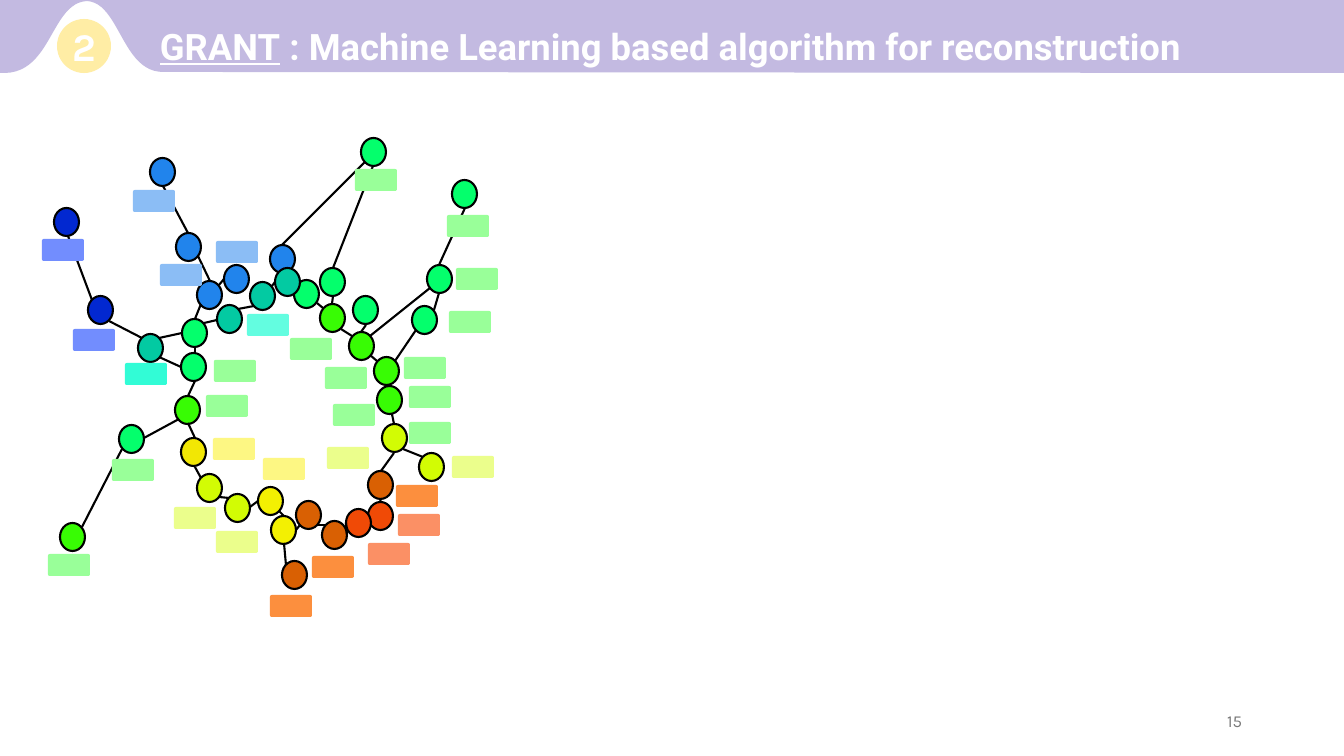
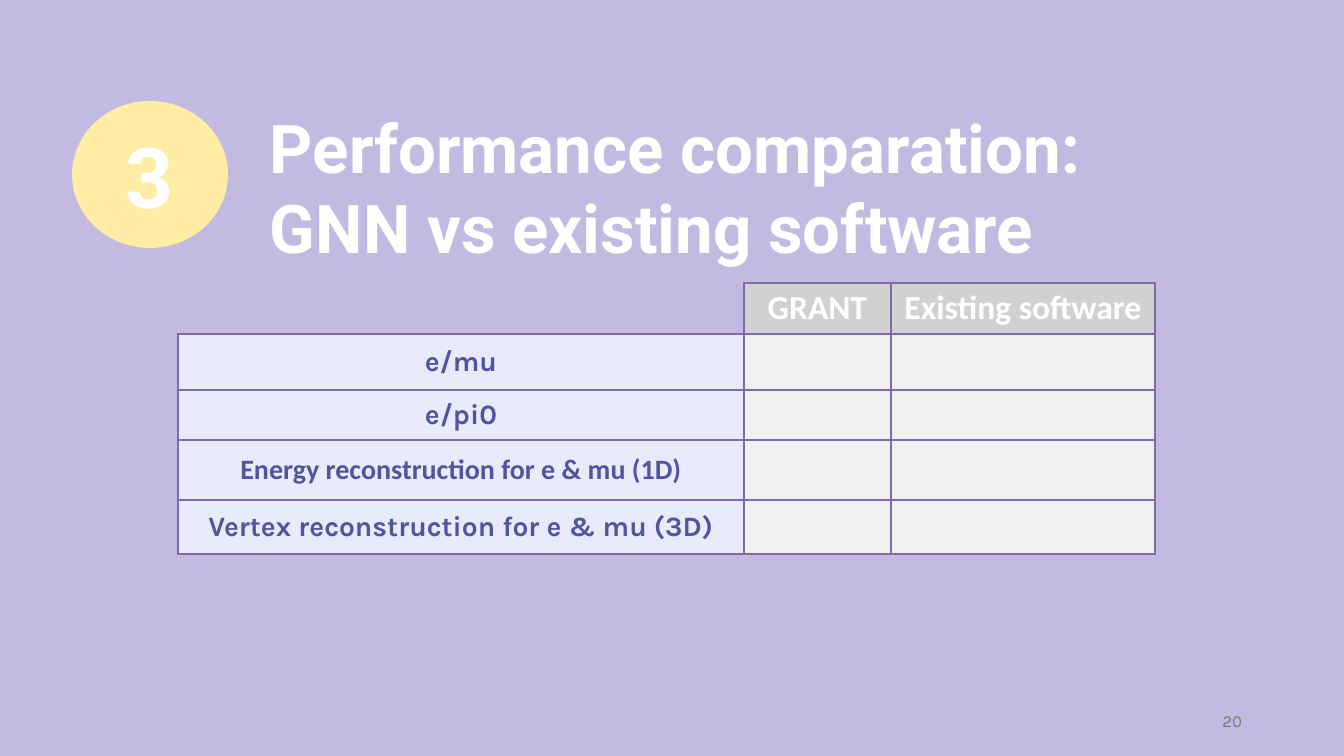
from lxml import etree
from pptx import Presentation
from pptx.dml.color import RGBColor
from pptx.enum.shapes import MSO_CONNECTOR, MSO_SHAPE
from pptx.enum.text import MSO_ANCHOR, PP_ALIGN
from pptx.oxml.ns import qn
from pptx.util import Pt

W, H = 1344, 756
PX = 12192000 / W
LILAC, YELLOW, WHITE, BLACK = "C3BAE1", "FFEDA5", "FFFFFF", "000000"
GREY, INDIGO, VIOLET = "797979", "51559C", "7E6BA9"
rgb = RGBColor.from_string


def paint(sp, fill, line=None):
    sp.shadow.inherit = False
    sp.fill.solid()
    sp.fill.fore_color.rgb = rgb(fill)
    if line:
        sp.line.color.rgb = rgb(line)
        sp.line.width = Pt(1.5)
    else:
        sp.line.fill.background()


def write(tf, runs, size, font, color, bold=True, align=PP_ALIGN.LEFT):
    p = tf.paragraphs[0]
    p.alignment = align
    for text, underline in runs:
        r = p.add_run()
        r.text = text
        r.font.size = Pt(size)
        r.font.name = font
        r.font.bold = bold
        r.font.underline = underline
        r.font.color.rgb = rgb(color)


prs = Presentation()
prs.slide_width, prs.slide_height = round(W * PX), round(H * PX)
graph_slide, table_slide = [prs.slides.add_slide(prs.slide_layouts[6]) for _ in range(2)]

nodes = {
    "0228D0": [(88, 296), (54, 208)],
    "2184EC": [(197, 281), (150, 158), (224, 265), (270, 245), (176, 233)],
    "04FF6C": [(320, 268), (181, 353), (182, 319), (353, 296), (294, 280),
               (452, 180), (427, 265), (119, 425), (361, 138), (412, 306)],
    "03CAA2": [(250, 282), (217, 305), (275, 268), (138, 334)],
    "38FC04": [(374, 357), (349, 332), (320, 304), (175, 396), (377, 386), (60, 523)],
    "F2E704": [(181, 438)],
    "D2FC04": [(225, 494), (382, 424), (197, 474), (419, 453)],
    "F3F002": [(271, 516), (258, 487)],
    "D96003": [(282, 561), (322, 521), (368, 471), (296, 501)],
    "F04A06": [(368, 502), (346, 509)],
}
edges = [
    (195, 353, 195, 347), (181, 367, 159, 357), (188, 396, 195, 381),
    (188, 423, 195, 438), (201, 478, 195, 467), (219, 497, 229, 498),
    (250, 507, 258, 501), (179, 419, 144, 438), (284, 516, 279, 511),
    (296, 530, 300, 525), (326, 525, 318, 525), (346, 523, 347, 535),
    (380, 502, 381, 499), (394, 453, 381, 471), (403, 449, 423, 457),
    (394, 424, 392, 414), (377, 361, 370, 355), (416, 330, 395, 361),
    (434, 310, 439, 293), (366, 325, 361, 332), (341, 329, 352, 336),
    (323, 308, 317, 303), (332, 304, 333, 296), (275, 282, 272, 286),
    (254, 306, 238, 309), (217, 320, 204, 323), (201, 304, 195, 319),
    (210, 281, 198, 256), (224, 279, 219, 285), (109, 321, 142, 338),
    (92, 300, 68, 236), (188, 233, 163, 186), (282, 245, 365, 162),
    (465, 208, 439, 265), (370, 336, 430, 288), (122, 449, 82, 527),
    (284, 543, 286, 565), (182, 333, 159, 338), (333, 268, 373, 166),
]
labels = {
    "99FF99": [(48, 554), (112, 459), (355, 169), (447, 215), (456, 268),
               (449, 311), (404, 357), (409, 386), (409, 422), (214, 360),
               (206, 395), (290, 338), (325, 367), (333, 404)],
    "728DFE": [(73, 329), (42, 239)],
    "32FCD6": [(125, 363)],
    "63FDE0": [(247, 314)],
    "8BBDF5": [(133, 190), (160, 264), (216, 241)],
    "EBFE8C": [(452, 456), (174, 507), (216, 531), (327, 447)],
    "FDF783": [(213, 438), (263, 458)],
    "FC8F3E": [(396, 485), (270, 595), (312, 556)],
    "FB9065": [(398, 514), (368, 543)],
}

shapes = graph_slide.shapes
for color, spots in nodes.items():
    for x, y in spots:
        sp = shapes.add_shape(MSO_SHAPE.OVAL, *[round(v * PX) for v in (x, y, 25, 28)])
        paint(sp, color, BLACK)
for edge in edges:
    cx = shapes.add_connector(MSO_CONNECTOR.STRAIGHT, *[round(v * PX) for v in edge])
    cx.line.color.rgb = rgb(BLACK)
    cx.line.width = Pt(1.5)
    etree.SubElement(cx._element.spPr, qn("a:effectLst"))
for color, spots in labels.items():
    for x, y in spots:
        sp = shapes.add_shape(MSO_SHAPE.ROUNDED_RECTANGLE,
                              *[round(v * PX) for v in (x, y, 42, 22)])
        sp.adjustments[0] = 0.08
        paint(sp, color)

curves = [
    [(164, 72), (122, 73), (120, 3), (87, 1)],
    [(87, 1), (51, 3), (52, 72), (5, 73)],
]
outline = [(W, 0), (W, 73)]
for curve in curves:
    for i in range(25):
        t = i / 24
        weights = ((1 - t) ** 3, 3 * t * (1 - t) ** 2, 3 * t ** 2 * (1 - t), t ** 3)
        outline.append([sum(w * pt[k] for w, pt in zip(weights, curve)) for k in (0, 1)])
outline.append((0, 73))
fb = shapes.build_freeform(0, 0)
fb.add_line_segments([(round(x * PX), round(y * PX)) for x, y in outline])
paint(fb.convert_to_shape(), LILAC)

fill = table_slide.background.fill
fill.solid()
fill.fore_color.rgb = rgb(LILAC)

pages = [
    (graph_slide, "15", (57, 19, 54, 54), ("2", 28, "Karla"), (150, 19, 1194, 54), 26,
     [("GRANT", True), (" : Machine Learning based algorithm for reconstruction", False)]),
    (table_slide, "20", (72, 101, 156, 147), ("3", 60, "Roboto"), (260, 101, 940, 174), 48,
     [("Performance comparation: GNN vs existing software", False)]),
]
for s, number, badge_box, (digit, digit_size, digit_font), title_box, title_size, title in pages:
    sp = s.shapes.add_shape(MSO_SHAPE.OVAL, *[round(v * PX) for v in badge_box])
    paint(sp, YELLOW)
    tf = sp.text_frame
    tf.margin_left = tf.margin_right = tf.margin_top = tf.margin_bottom = 0
    tf.vertical_anchor = MSO_ANCHOR.MIDDLE
    write(tf, [(digit, False)], digit_size, digit_font, WHITE, align=PP_ALIGN.CENTER)

    tf = s.shapes.add_textbox(*[round(v * PX) for v in title_box]).text_frame
    tf.word_wrap = True
    write(tf, title, title_size, "Roboto", WHITE)

    tf = s.shapes.add_textbox(*[round(v * PX) for v in (950, 701, 302, 40)]).text_frame
    tf.word_wrap = True
    tf.vertical_anchor = MSO_ANCHOR.MIDDLE
    write(tf, [(number, False)], 12, "Karla", GREY, False, PP_ALIGN.RIGHT)

cols, rows = [566, 147, 264], [51, 56, 50, 60, 54]
heads = ["", "GRANT", "Existing software"]
tasks = [
    ("e/mu", "Karla"),
    ("e/pi0", "Karla"),
    ("Energy reconstruction for e & mu (1D)", "Calibri"),
    ("Vertex reconstruction for e & mu (3D)", "Karla"),
]
box = [round(v * PX) for v in (178, 283, sum(cols), sum(rows))]
tbl = table_slide.shapes.add_table(len(rows), len(cols), *box).table
tbl.first_row = tbl.horz_banding = False
for c, width in enumerate(cols):
    tbl.columns[c].width = round(width * PX)
for r, height in enumerate(rows):
    tbl.rows[r].height = round(height * PX)
    for c in range(len(cols)):
        cell = tbl.cell(r, c)
        corner = r == 0 and c == 0
        if corner:
            cell.fill.background()
        else:
            cell.fill.solid()
            cell.fill.fore_color.rgb = rgb("D1D1D1" if r == 0 else "E9EAFB" if c == 0 else "F0F0F0")
        if r == 0 and c > 0:
            write(cell.text_frame, [(heads[c], False)], 24, "Calibri", WHITE, align=PP_ALIGN.CENTER)
        elif r > 0 and c == 0:
            cell.vertical_anchor = MSO_ANCHOR.MIDDLE
            task, font = tasks[r - 1]
            write(cell.text_frame, [(task, False)], 20, font, INDIGO, align=PP_ALIGN.CENTER)
        body = r > 0 and c > 0
        sides = [
            ("a:lnL", body and c > 1, corner),
            ("a:lnR", body and c < len(cols) - 1, False),
            ("a:lnT", body and r > 1, corner),
            ("a:lnB", body and r < len(rows) - 1, False),
        ]
        tcPr = cell._tc.get_or_add_tcPr()
        for i, (tag, thin, hidden) in enumerate(sides):
            ln = etree.Element(qn(tag), w=str(Pt(1 if thin else 2.25)))
            if hidden:
                etree.SubElement(ln, qn("a:noFill"))
            else:
                solid = etree.SubElement(ln, qn("a:solidFill"))
                etree.SubElement(solid, qn("a:srgbClr"), val=VIOLET)
            tcPr.insert(i, ln)

prs.save("out.pptx")
